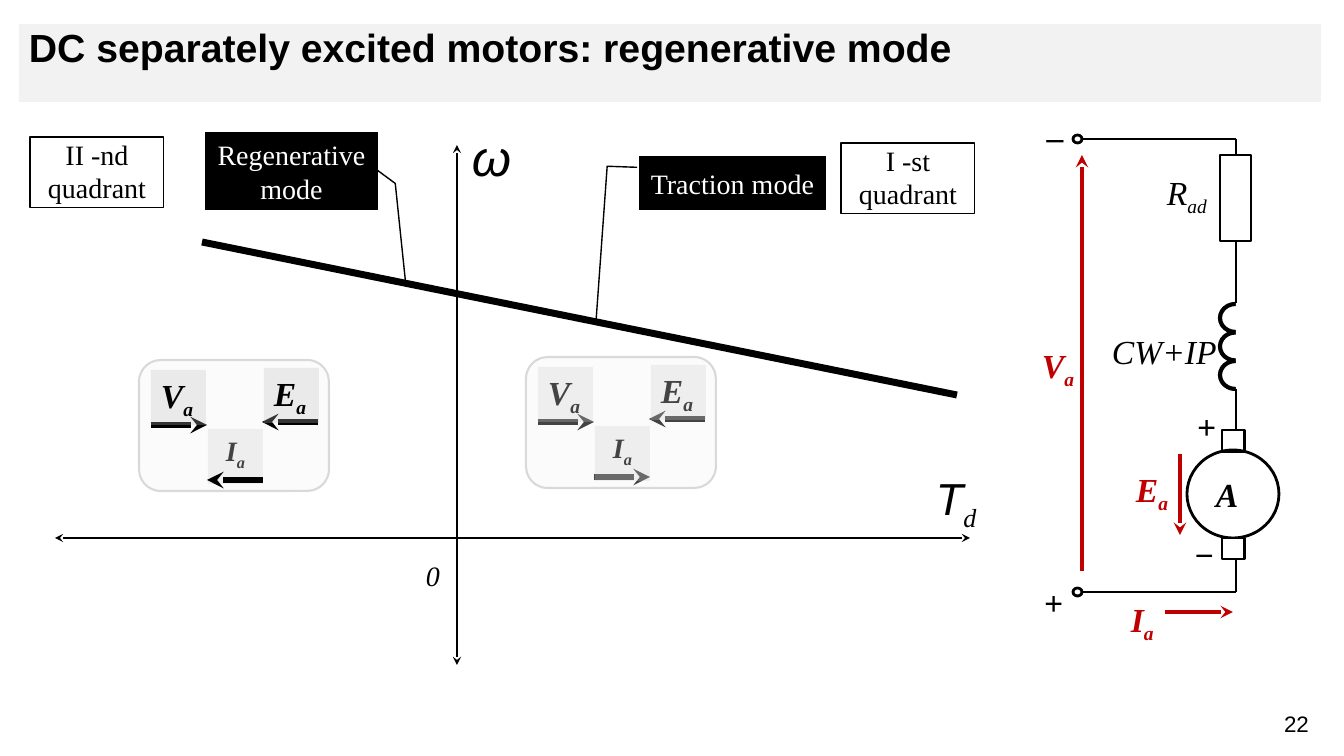
import pptx
import pptx.util
import pptx.dml.color
import pptx.enum.shapes
import pptx.enum.text
import pptx.oxml.ns
import lxml.etree

RGB = pptx.dml.color.RGBColor
BLACK = RGB(0, 0, 0)
WHITE = RGB(255, 255, 255)
RED = RGB(0xC0, 0, 0)
PALE = RGB(0xF2, 0xF2, 0xF2)
GREY = RGB(0xBF, 0xBF, 0xBF)
EDGE = RGB(0xD9, 0xD9, 0xD9)

KIND = pptx.enum.shapes.MSO_SHAPE
LEFT = pptx.enum.text.PP_ALIGN.LEFT
MID = pptx.enum.text.PP_ALIGN.CENTER
TOP = pptx.enum.text.MSO_ANCHOR.TOP
CENTER = pptx.enum.text.MSO_ANCHOR.MIDDLE
SERIF = "Times New Roman"
SANS = "Arial"


def px(n):
    return pptx.util.Emu(round(n * 914400 / 100.8))


def add(parent, tag, **attrs):
    return lxml.etree.SubElement(parent, pptx.oxml.ns.qn(tag), attrs)


class Sheet:
    def __init__(self, deck):
        self.slide = deck.slides.add_slide(deck.slide_layouts[6])
        self.items = self.slide.shapes

    def shape(self, kind, x, y, w, h, fill=None, line=None, width=2, alpha=None):
        item = self.items.add_shape(kind, px(x), px(y), px(w), px(h))
        item.shadow.inherit = False
        if fill is None:
            item.fill.background()
        else:
            item.fill.solid()
            item.fill.fore_color.rgb = fill
        if alpha:
            tint = item.fill._xPr.find(".//" + pptx.oxml.ns.qn("a:srgbClr"))
            add(tint, "a:alpha", val=str(alpha * 1000))
        if line is None:
            item.line.fill.background()
        else:
            item.line.color.rgb = line
            item.line.width = pptx.util.Pt(width)
        return item

    def letter(self, item, text, size=24, color=BLACK, font=SERIF, bold=False,
               ital=False, align=LEFT, anchor=TOP, space=None, inset=None):
        """Fill a shape with text; what follows "_" in a line is a subscript."""
        frame = item.text_frame
        frame.word_wrap = True
        frame.vertical_anchor = anchor
        if inset is not None:
            frame.margin_left = frame.margin_right = px(inset)
            frame.margin_top = frame.margin_bottom = px(inset)
        for i, row in enumerate(text.split("\n")):
            para = frame.add_paragraph() if i else frame.paragraphs[0]
            para.alignment = align
            if space:
                para.line_spacing = space
            para.font.size = pptx.util.Pt(size)
            para.font.name = font
            para.font.bold = bold
            para.font.italic = ital
            para.font.color.rgb = color
            base, mark, sub = row.partition("_")
            para.add_run().text = base
            if mark:
                run = para.add_run()
                run.text = sub
                run.font.name = SERIF
                run._r.get_or_add_rPr().set("baseline", "-25000")

    def label(self, text, x, y, w, h, **style):
        box = self.items.add_textbox(px(x), px(y), px(w), px(h))
        self.letter(box, text, **style)

    def line(self, x1, y1, x2, y2, color=BLACK, width=2, head=False, tail=False):
        item = self.items.add_connector(
            pptx.enum.shapes.MSO_CONNECTOR.STRAIGHT, px(x1), px(y1), px(x2), px(y2))
        item.line.color.rgb = color
        item.line.width = pptx.util.Pt(width)
        pen = item.line._get_or_add_ln()
        if head:
            add(pen, "a:headEnd", type="stealth")
        if tail:
            add(pen, "a:tailEnd", type="stealth")
        add(item._element.spPr, "a:effectLst")

    def callout(self, text, x, y, w, h, bends):
        item = self.shape(KIND.LINE_CALLOUT_2_NO_BORDER, x, y, w, h, BLACK, BLACK, 1)
        for i, bend in enumerate(bends):
            item.adjustments[i] = bend
        self.letter(item, text, 20, WHITE, align=MID, anchor=CENTER)

    def force(self, text, x, y, **style):
        box = self.shape(KIND.RECTANGLE, x, y, 55, 55, GREY, alpha=28)
        self.letter(box, text, bold=True, ital=True, **style)

    def panel(self, x, y):
        self.shape(KIND.ROUNDED_RECTANGLE, x - 12, y - 10, 190, 131, PALE, EDGE, 1.5, 28)

    def current(self, x, y):
        self.force("I_a", x + 57, y + 59, size=20, align=MID)

    def arrows(self, x, y, start, end):
        """Voltage, EMF and current arrows; the current runs from start to end."""
        for x1, x2, drop in ((167, 111, 52), (0, 56, 55), (start, end, 110)):
            self.line(x + x1, y + drop, x + x2, y + drop, width=4, tail=True)

    def pair(self, x, y):
        self.force("Е_a", x + 113, y - 2)
        self.force("V_a", x, y)


def graph(sheet):
    sheet.line(457, 665, 457, 145, width=1.25, head=True, tail=True)
    sheet.line(55, 538, 970, 538, width=1.25, head=True, tail=True)
    sheet.line(202, 242, 957, 395, width=5)
    for text, x, y in (("I -st\nquadrant", 841, 143), ("II -nd\nquadrant", 30, 137)):
        box = sheet.shape(KIND.RECTANGLE, x, y, 134, 71, line=BLACK, width=0.75)
        sheet.letter(box, text, 20, align=MID, inset=0)
    sheet.label("0", 416, 554, 45, 53, size=20, ital=True)
    sheet.callout("Traction mode", 639, 156, 187, 54,
                  (0.21, -0.01, 0.19, -0.17, 3.07, -0.23))
    sheet.callout("Regenerative\nmode", 205, 132, 173, 78,
                  (0.48, 0.99, 0.66, 1.1, 1.94, 1.16))

    drive = 538, 367
    sheet.arrows(*drive, 56, 112)
    sheet.pair(*drive)
    sheet.current(*drive)
    sheet.panel(*drive)

    brake = 151, 370
    sheet.current(*brake)
    sheet.panel(*brake)
    sheet.arrows(*brake, 112, 56)
    sheet.pair(*brake)

    sheet.label("ω", 462, 112, 82, 64, size=36, font=SANS, ital=True, space=1.15)
    sheet.label("Τ_d", 926, 457, 107, 79, size=32, font=SANS, ital=True, space=1.15)


def circuit(sheet):
    for i in range(3):
        sheet.shape(KIND.OVAL, 1220, 361 - 28.5 * i, 31, 28, WHITE, BLACK, 3)
    sheet.shape(KIND.RECTANGLE, 1236, 245, 46, 172, WHITE)
    for sign, x, y in (("+", 1187, 395), ("−", 1184, 523)):
        box = sheet.shape(KIND.RECTANGLE, x, y, 47, 64, WHITE)
        sheet.letter(box, sign, bold=True, ital=True, space=1.15)

    rail = 1236
    for y1, y2 in ((139, 155), (241, 303), (389, 430), (555, 592)):
        sheet.line(rail, y1, rail, y2)
    for y in (139, 592):
        sheet.line(rail, y, 1082, y)
        sheet.shape(KIND.OVAL, 1073, y - 4, 9, 8, line=BLACK)
    sheet.shape(KIND.RECTANGLE, 1220, 155, 31, 86, line=BLACK)
    sheet.shape(KIND.RECTANGLE, 1222, 430, 23, 22, line=BLACK)
    sheet.shape(KIND.OVAL, 1187, 450, 92, 88, line=BLACK)
    sheet.shape(KIND.RECTANGLE, 1222, 538, 23, 21, WHITE, BLACK)

    for ends in ((1082, 571, 1082, 155), (1180, 454, 1180, 535), (1165, 612, 1233, 612)):
        sheet.line(*ends, color=RED, width=3, tail=True)
    for text, x, y, w, h, color, bold in (
            ("R_ad", 1157, 160, 70, 87, BLACK, False),
            ("CW+IP", 1102, 320, 130, 52, BLACK, False),
            ("I_a", 1121, 587, 66, 65, RED, True),
            ("Е_a", 1126, 457, 70, 86, RED, True),
            ("V_a", 1032, 333, 70, 86, RED, True),
            ("A", 1206, 463, 56, 64, BLACK, True),
            ("+", 1034, 571, 47, 64, BLACK, True),
            ("–", 1037, 105, 47, 64, BLACK, True)):
        sheet.label(text, x, y, w, h, color=color, bold=bold, ital=True, space=1.15)


def main():
    deck = pptx.Presentation()
    deck.slide_width, deck.slide_height = px(1344), px(756)
    sheet = Sheet(deck)
    sheet.label("22", 1264, 705, 65, 37, size=16, font=SANS, align=MID)
    title = sheet.shape(KIND.RECTANGLE, 19, 24, 1302, 78, PALE)
    sheet.letter(title, "DC separately excited motors: regenerative mode", 28,
                 font=SANS, bold=True, space=0.9)
    graph(sheet)
    circuit(sheet)
    deck.save("out.pptx")


if __name__ == "__main__":
    main()
